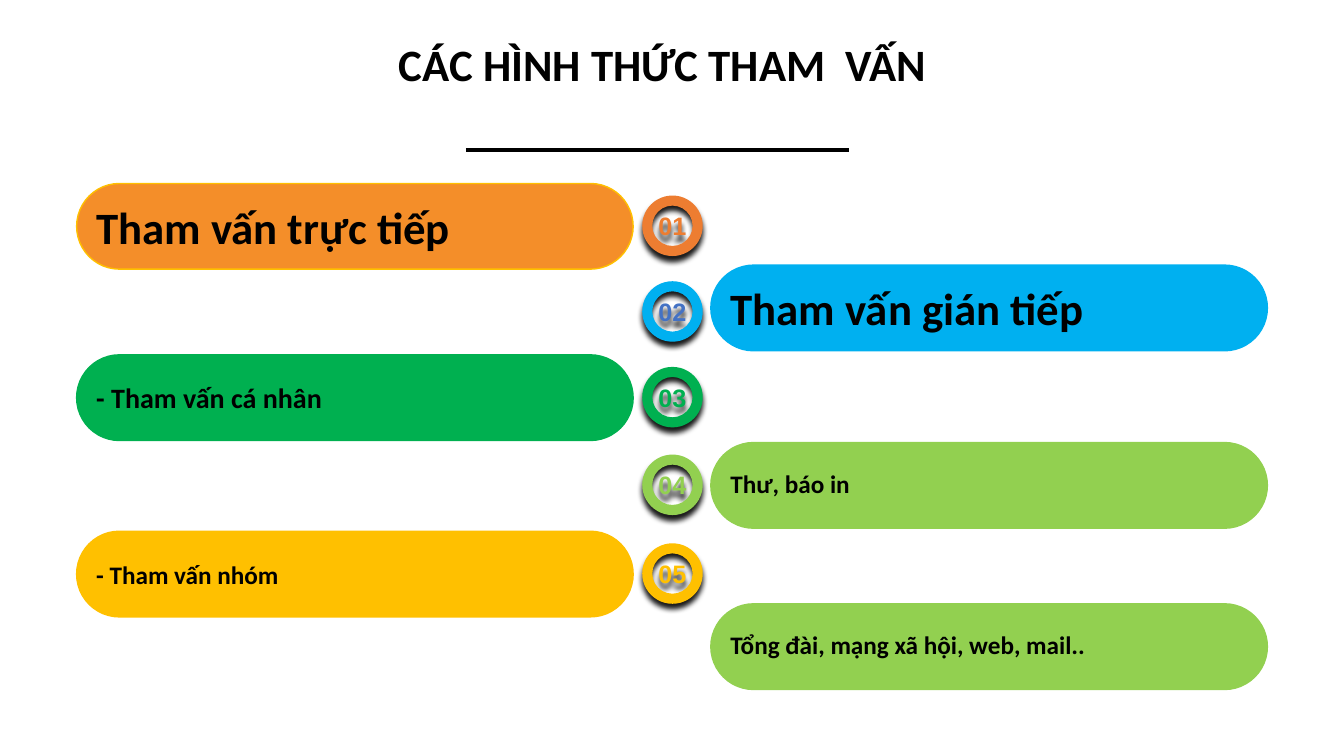
from lxml import etree
from pptx import Presentation
from pptx.dml.color import RGBColor
from pptx.enum.shapes import MSO_CONNECTOR, MSO_SHAPE
from pptx.enum.text import MSO_ANCHOR, MSO_AUTO_SIZE, PP_ALIGN
from pptx.oxml import parse_xml
from pptx.oxml.ns import nsdecls, qn
from pptx.util import Inches, Pt

BLACK = RGBColor(0x00, 0x00, 0x00)
ORANGE = RGBColor(0xF4, 0x8E, 0x29)
RUST = RGBColor(0xED, 0x7D, 0x31)
SKY = RGBColor(0x00, 0xB0, 0xF0)
BLUE = RGBColor(0x44, 0x72, 0xC4)
GREEN = RGBColor(0x00, 0xB0, 0x50)
LIME = RGBColor(0x92, 0xD0, 0x50)
GOLD = RGBColor(0xFF, 0xC0, 0x00)

LEFT_X, RIGHT_X = 0.76, 7.05
BAR_W, BAR_H = 5.52, 0.85
RING_X, RING_SIZE, RING_BAND = 6.37, 0.6, 0.1

# left, top, text, size, fill, outline, alignment, line spacing
BARS = [
    (LEFT_X, 1.82, "Tham vấn trực tiếp", 32, ORANGE, GOLD, PP_ALIGN.JUSTIFY, 1.0),
    (RIGHT_X, 2.63, "Tham vấn gián tiếp", 32, SKY, SKY, PP_ALIGN.LEFT, 1.0),
    (LEFT_X, 3.52, "- Tham vấn cá nhân", 20, GREEN, GREEN, PP_ALIGN.JUSTIFY, 1.0),
    (RIGHT_X, 4.39, "Thư, báo in", 18, LIME, LIME, PP_ALIGN.JUSTIFY, 0.9),
    (LEFT_X, 5.27, "- Tham vấn nhóm", 18, GOLD, GOLD, PP_ALIGN.JUSTIFY, 1.0),
    (RIGHT_X, 5.99, "Tổng đài, mạng xã hội, web, mail..", 18, LIME, LIME,
     PP_ALIGN.JUSTIFY, 0.9),
]
# top, ring colour, number colour
RINGS = [
    (1.94, RUST, RUST),
    (2.79, SKY, BLUE),
    (3.64, GREEN, GREEN),
    (4.51, LIME, LIME),
    (5.39, GOLD, GOLD),
]


def set_font(p, name, size, color):
    p.font.name = name
    p.font.size = Pt(size)
    p.font.bold = True
    p.font.color.rgb = color


def set_margins(tf, margin):
    tf.margin_left = tf.margin_right = Inches(margin)
    tf.margin_top = tf.margin_bottom = Inches(margin)


def add_title(slide, x, y, w, h):
    title = slide.shapes.title
    title.left, title.top, title.width, title.height = map(Inches, (x, y, w, h))
    tf = title.text_frame
    tf.text = "CÁC HÌNH THỨC THAM  VẤN"
    tf.word_wrap = True
    tf.auto_size = MSO_AUTO_SIZE.SHAPE_TO_FIT_TEXT
    tf.vertical_anchor = MSO_ANCHOR.TOP
    p = tf.paragraphs[0]
    p.alignment = PP_ALIGN.CENTER
    set_font(p, "Calibri", 32, BLACK)


def add_rule(slide, x, y, w):
    line = slide.shapes.add_connector(
        MSO_CONNECTOR.STRAIGHT, Inches(x), Inches(y), Inches(x + w), Inches(y))
    line.line.color.rgb = BLACK
    line.line.width = Pt(2.5)
    etree.SubElement(line._element.spPr, qn("a:effectLst"))


def add_bar(slide, x, y, text, size, fill, outline, alignment, spacing):
    sp = slide.shapes.add_shape(MSO_SHAPE.ROUNDED_RECTANGLE, Inches(x), Inches(y),
                                Inches(BAR_W), Inches(BAR_H))
    sp.adjustments[0] = 0.5
    sp.shadow.inherit = False
    sp.fill.solid()
    sp.fill.fore_color.rgb = fill
    sp.line.color.rgb = outline
    sp.line.width = Pt(1)
    tf = sp.text_frame
    tf.text = text
    tf.word_wrap = True
    tf.vertical_anchor = MSO_ANCHOR.MIDDLE
    set_margins(tf, 0.07)
    p = tf.paragraphs[0]
    p.alignment = alignment
    p.line_spacing = spacing
    set_font(p, "Calibri", size, BLACK)


def add_drop_shadow(sp):
    """Give the shape a soft black shadow straight below it."""
    sp._element.spPr.append(parse_xml(
        f'<a:effectLst {nsdecls("a")}>'
        f'<a:outerShdw blurRad="{Pt(4)}" dist="{Pt(4)}" dir="5400000" rotWithShape="0">'
        '<a:srgbClr val="000000"><a:alpha val="90000"/></a:srgbClr>'
        '</a:outerShdw></a:effectLst>'))


def add_ring(slide, x, y, number, fill, color):
    sp = slide.shapes.add_shape(MSO_SHAPE.DONUT, Inches(x), Inches(y),
                                Inches(RING_SIZE), Inches(RING_SIZE))
    sp.adjustments[0] = RING_BAND / RING_SIZE
    sp.fill.solid()
    sp.fill.fore_color.rgb = fill
    sp.line.fill.background()
    add_drop_shadow(sp)
    tf = sp.text_frame
    tf.text = f"{number:02d}"
    tf.word_wrap = False
    tf.vertical_anchor = MSO_ANCHOR.MIDDLE
    set_margins(tf, 0)
    p = tf.paragraphs[0]
    p.alignment = PP_ALIGN.CENTER
    set_font(p, "Arial", 18, color)


def main():
    prs = Presentation()
    prs.slide_width, prs.slide_height = Inches(13.33), Inches(7.5)
    slide = prs.slides.add_slide(prs.slide_layouts[5])
    add_title(slide, 1.2, 0.31, 10.75, 0.64)
    add_rule(slide, 4.62, 1.49, 3.8)
    for bar in BARS:
        add_bar(slide, *bar)
    for number, (top, fill, color) in enumerate(RINGS, start=1):
        add_ring(slide, RING_X, top, number, fill, color)
    prs.save("out.pptx")


if __name__ == "__main__":
    main()
